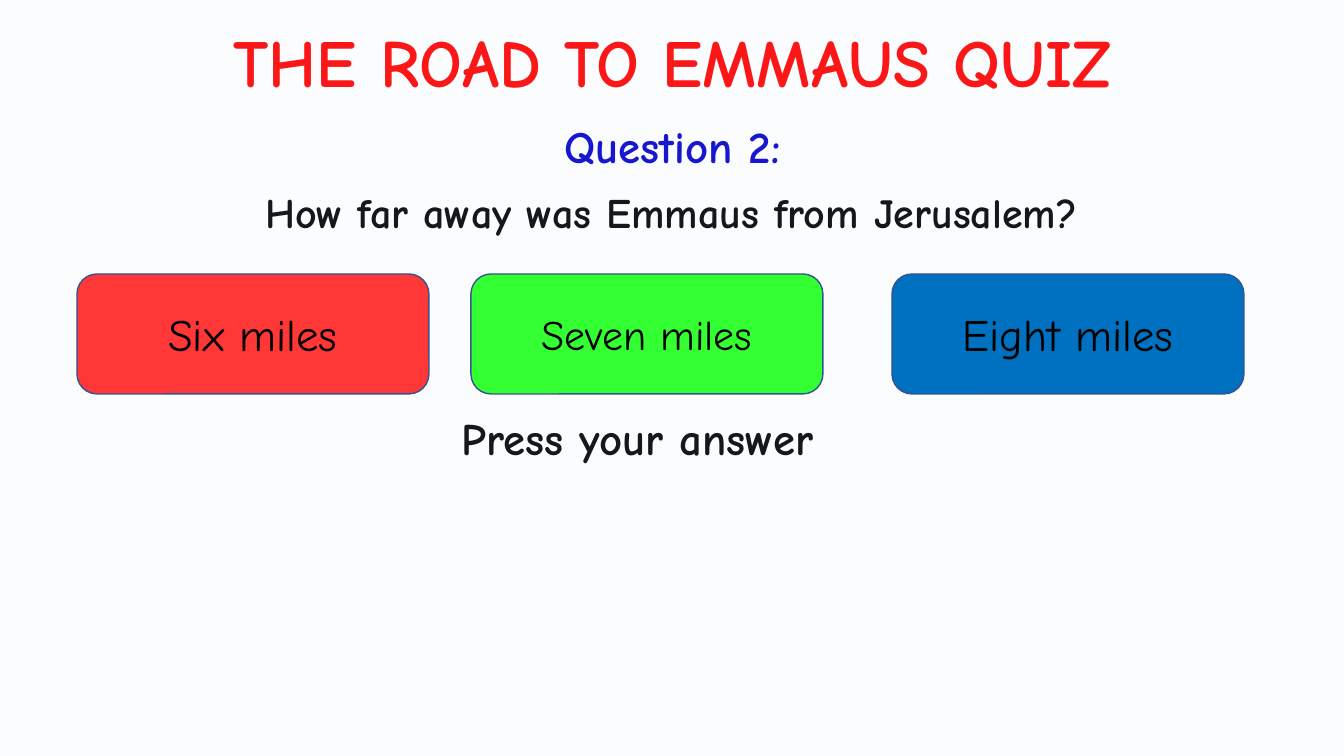
from pptx import Presentation
from pptx import util as u
from pptx.dml.color import RGBColor
from pptx.enum import shapes, text
from pptx.oxml import parse_xml
from pptx.oxml.ns import nsdecls, qn

RED = RGBColor(0xFF, 0x00, 0x00)
NAVY = RGBColor(0x00, 0x00, 0xCC)
BLACK = RGBColor(0x00, 0x00, 0x00)
EDGE = RGBColor(0x32, 0x54, 0x91)
PALE = RGBColor(0xDA, 0xE3, 0xF3)
CORAL = RGBColor(0xFF, 0x37, 0x37)
LIME = RGBColor(0x33, 0xFF, 0x33)
BLUE = RGBColor(0x00, 0x70, 0xC0)

CENTER = text.PP_ALIGN.CENTER
LEFT = text.PP_ALIGN.LEFT


class Quiz:
    font = "Comic Neue"
    scale = 914400 / 100.8

    def __init__(self, deck):
        deck.slide_width, deck.slide_height = self.emu(1344, 756)
        self.slide = deck.slides.add_slide(deck.slide_layouts[6])

    def emu(self, *sizes):
        return [u.Emu(round(n * self.scale)) for n in sizes]

    def line(self, frame, words, size, color, bold, align):
        """Fill the frame's first paragraph with one styled run."""
        par = frame.paragraphs[0]
        par.alignment = align
        run = par.add_run()
        run.text = words
        run.font.name = self.font
        run.font.size = u.Pt(size)
        run.font.bold = bold
        run.font.color.rgb = color
        return par

    def label(self, box, words, size, color=BLACK, align=CENTER, wrap=True,
              space=None, before=0):
        frame = self.slide.shapes.add_textbox(*self.emu(*box)).text_frame
        frame.word_wrap = wrap
        par = self.line(frame, words, size, color, True, align)
        par.line_spacing = space
        par.space_before = u.Pt(before)

    def block(self, kind, box, fill):
        shape = self.slide.shapes.add_shape(kind, *self.emu(*box))
        shape.shadow.inherit = False
        shape.fill.solid()
        shape.fill.fore_color.rgb = fill
        shape.line.color.rgb = EDGE
        shape.line.width = u.Pt(1)
        return shape

    def wash(self, box, fill, alpha):
        """Lay a see-through tint over the slide; alpha is in percent."""
        shape = self.block(shapes.MSO_SHAPE.RECTANGLE, box, fill)
        color = shape.element.spPr.find(qn("a:solidFill"))[0]
        color.append(parse_xml(f'<a:alpha {nsdecls("a")} val="{alpha * 1000}"/>'))

    def button(self, box, words, size, fill):
        shape = self.block(shapes.MSO_SHAPE.ROUNDED_RECTANGLE, box, fill)
        frame = shape.text_frame
        frame.word_wrap = True
        frame.vertical_anchor = text.MSO_ANCHOR.MIDDLE
        self.line(frame, words, size, BLACK, False, CENTER)


def main():
    deck = Presentation()
    quiz = Quiz(deck)
    quiz.label((132, 15, 1081, 92), "THE ROAD TO EMMAUS QUIZ", 48, RED, wrap=False)
    quiz.label((55, 190, 1233, 73), "How far away was Emmaus from Jerusalem?", 30,
               space=u.Pt(30), before=10)
    quiz.label((452, 412, 678, 73), "Press your answer", 32, align=LEFT,
               space=0.9, before=7.5)
    quiz.label((450, 114, 445, 65), "Question 2:", 32, NAVY)
    quiz.wash((-43, -92, 1430, 880), PALE, 10)
    for left, words, size, fill in (
        (77, "Six miles", 32, CORAL),
        (471, "Seven miles", 30, LIME),
        (892, "Eight miles", 32, BLUE),
    ):
        quiz.button((left, 274, 352, 120), words, size, fill)
    deck.save("out.pptx")


if __name__ == "__main__":
    main()
